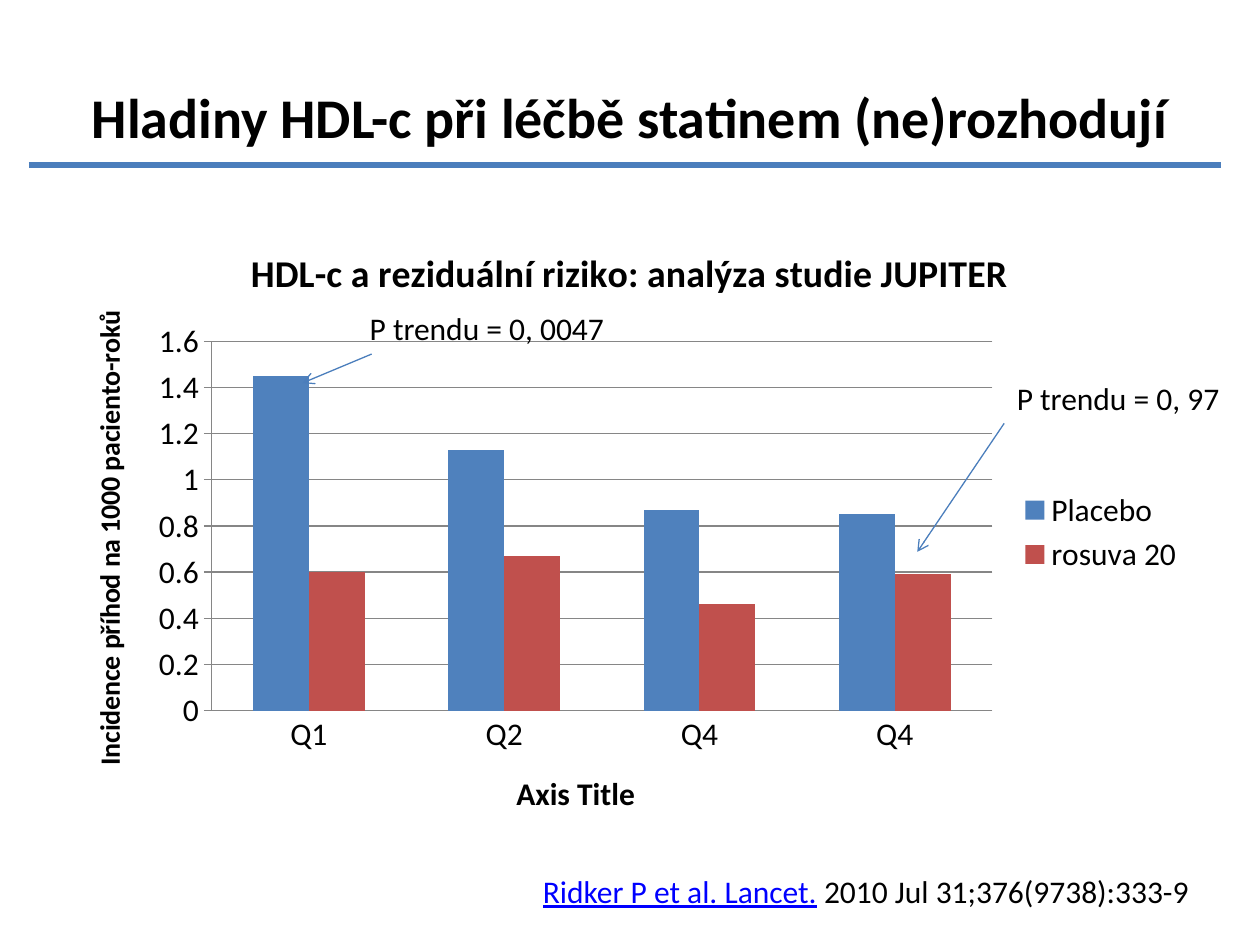
from lxml import etree
from pptx import Presentation
from pptx.chart.data import CategoryChartData
from pptx.dml.color import RGBColor
from pptx.enum.chart import XL_CHART_TYPE, XL_LEGEND_POSITION, XL_TICK_MARK
from pptx.enum.shapes import MSO_CONNECTOR
from pptx.enum.text import MSO_ANCHOR, PP_ALIGN
from pptx.oxml.ns import qn
from pptx.util import Inches, Pt

COLUMNS = XL_CHART_TYPE.COLUMN_CLUSTERED
RIGHT = XL_LEGEND_POSITION.RIGHT
TICK_NONE, TICK_OUT = XL_TICK_MARK.NONE, XL_TICK_MARK.OUTSIDE
STRAIGHT = MSO_CONNECTOR.STRAIGHT
TOP, MIDDLE = MSO_ANCHOR.TOP, MSO_ANCHOR.MIDDLE
LEFT, CENTER = PP_ALIGN.LEFT, PP_ALIGN.CENTER

BLACK = RGBColor(0x00, 0x00, 0x00)
LINK = RGBColor(0x00, 0x00, 0xFF)
LINE = RGBColor(0x4B, 0x7E, 0xBC)
GRID = RGBColor(0x86, 0x86, 0x86)
BLUE = RGBColor(0x4F, 0x81, 0xBD)
RED = RGBColor(0xC0, 0x50, 0x4D)
FONT = "Calibri"

prs = Presentation()
prs.slide_width, prs.slide_height = Inches(10), Inches(7.5)
s = prs.slides.add_slide(prs.slide_layouts[6])


def add_text(text, x, y, w, h, size=18, bold=False, align=CENTER,
             anchor=MIDDLE, wrap=True, link=""):
    """Add a text box; link is an underlined lead-in before the text."""
    tf = s.shapes.add_textbox(Inches(x), Inches(y), Inches(w), Inches(h)).text_frame
    tf.word_wrap = wrap
    tf.vertical_anchor = anchor
    p = tf.paragraphs[0]
    p.alignment = align
    for part, color in ((link, LINK), (text, BLACK)):
        if part:
            r = p.add_run()
            r.text = part
            r.font.name, r.font.size, r.font.bold = FONT, Pt(size), bold
            r.font.color.rgb = color
            if color == LINK:
                r.font.underline = True


def set_title(owner, text, size):
    """Title a chart or an axis."""
    tf = (owner.chart_title if hasattr(owner, "chart_title") else owner.axis_title).text_frame
    tf.text = text
    font = tf.paragraphs[0].runs[0].font
    font.name, font.size, font.bold = FONT, Pt(size), True
    font.color.rgb = BLACK


# Chart
data = CategoryChartData()
data.categories = ["Q1", "Q2", "Q4", "Q4"]
data.add_series("Placebo", (1.45, 1.13, 0.87, 0.85))
data.add_series("rosuva 20", (0.6, 0.67, 0.46, 0.59))
chart = s.shapes.add_chart(COLUMNS, Inches(0.5), Inches(1.75),
                           Inches(9), Inches(4.95), data).chart
chart.font.name, chart.font.size = FONT, Pt(18)
chart.font.color.rgb = BLACK
chart.has_legend = True
chart.legend.position = RIGHT
chart.legend.include_in_layout = False

plot = chart.plots[0]
plot.gap_width = 150
plot.overlap = 0
plot.vary_by_categories = False
for series, color in zip(plot.series, (BLUE, RED)):
    series.format.fill.solid()
    series.format.fill.fore_color.rgb = color

cat_axis, val_axis = chart.category_axis, chart.value_axis
set_title(chart, "HDL-c a reziduální riziko: analýza studie JUPITER", 21.6)
set_title(cat_axis, "Axis Title", 18)
set_title(val_axis, "Incidence příhod na 1000 paciento-roků", 16)
cat_axis.major_tick_mark = TICK_NONE
val_axis.major_tick_mark = TICK_OUT
val_axis.minimum_scale, val_axis.maximum_scale, val_axis.major_unit = 0, 1.6, 0.2
val_axis.has_major_gridlines = True
for part in (cat_axis, val_axis, val_axis.major_gridlines):
    part.format.line.color.rgb = GRID
    part.format.line.width = Pt(0.75)

# Title, citation and trend labels
add_text("Hladiny HDL-c při léčbě statinem (ne)rozhodují", 0.5, 0.3, 9, 1.25,
         size=32, bold=True)
add_text(" 2010 Jul 31;376(9738):333-9", 4.21, 6.87, 5.39, 0.4, align=LEFT,
         anchor=TOP, wrap=False, link="Ridker P et al. Lancet.")
add_text("P trendu = 0, 0047", 2.8, 2.41, 2.13, 0.39)
add_text("P trendu = 0, 97", 7.81, 2.96, 2.13, 0.39)

# Trend arrows and the rule under the title
for x1, y1, x2, y2, width, arrow in (
    (2.95, 2.81, 2.4, 3.04, 0.75, True),
    (7.97, 3.36, 7.28, 4.38, 0.75, True),
    (0.23, 1.31, 9.69, 1.31, 3, False),
):
    line = s.shapes.add_connector(STRAIGHT, Inches(x1), Inches(y1), Inches(x2), Inches(y2))
    line.line.color.rgb = LINE
    line.line.width = Pt(width)
    if arrow:
        etree.SubElement(line.line._get_or_add_ln(), qn("a:tailEnd"), type="arrow")
    etree.SubElement(line._element.spPr, qn("a:effectLst"))

prs.save("out.pptx")
